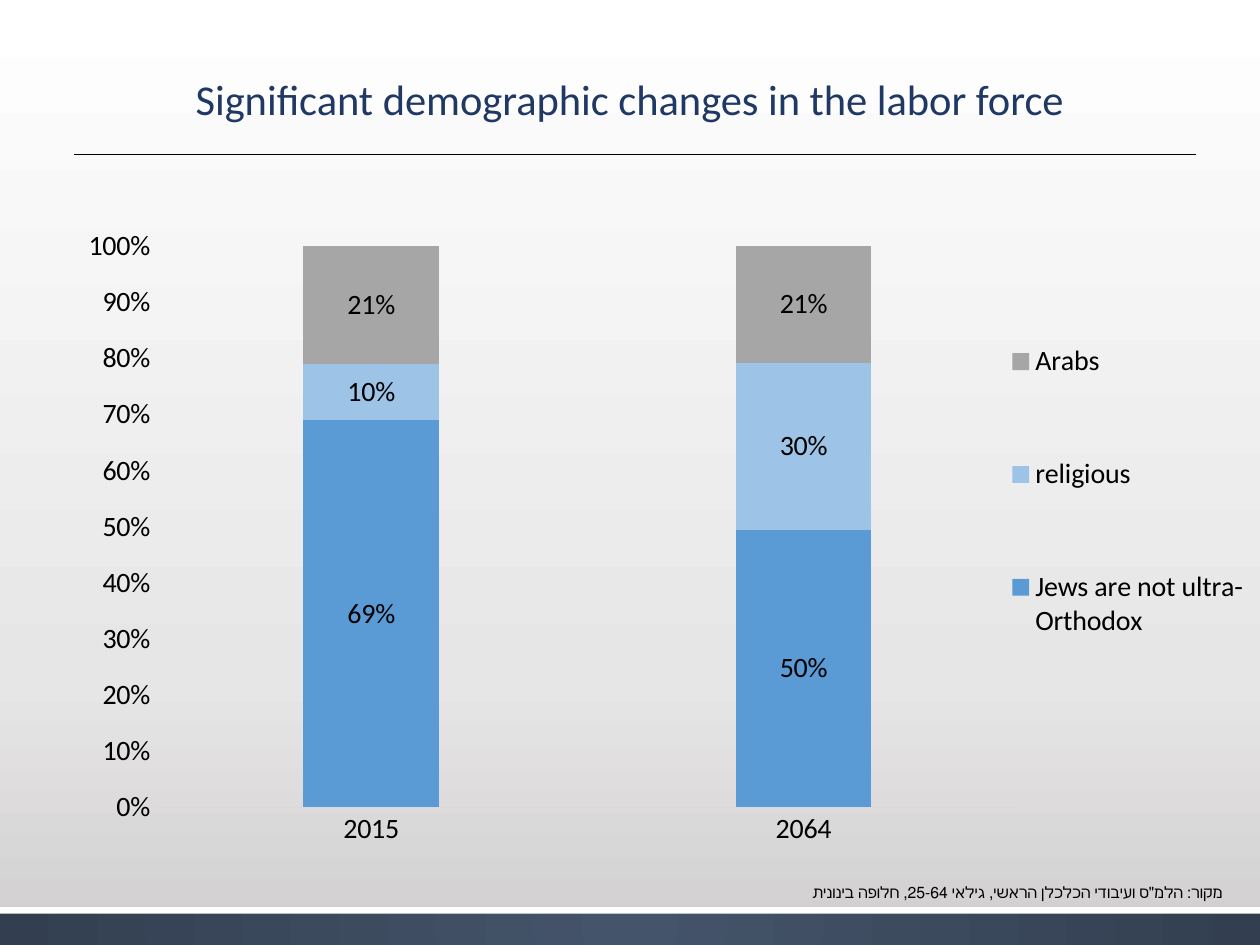
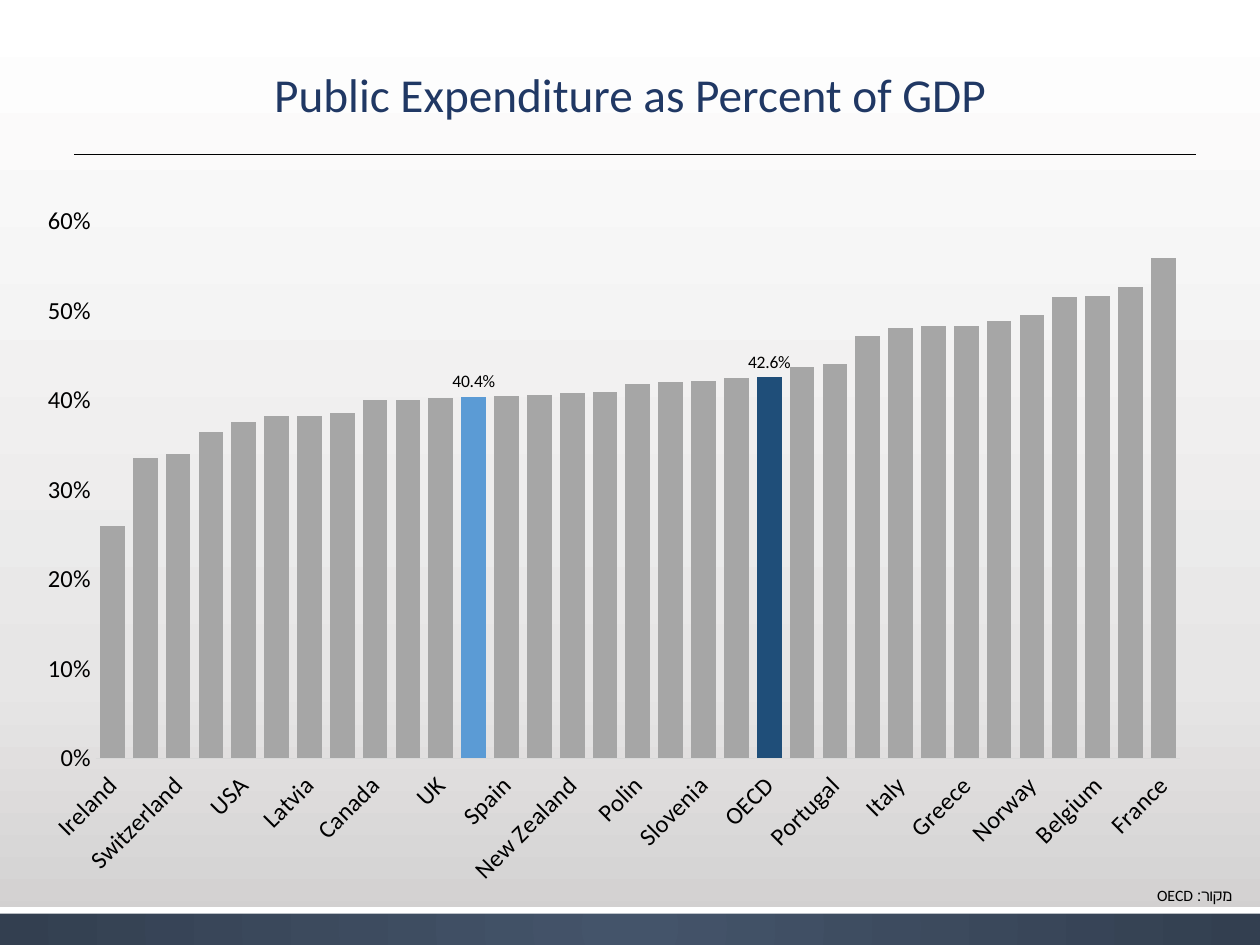
from lxml.etree import SubElement
from pptx import Presentation
from pptx.chart.data import CategoryChartData
from pptx.dml.color import RGBColor
from pptx.enum.chart import XL_CHART_TYPE, XL_LABEL_POSITION, XL_LEGEND_POSITION
from pptx.enum.chart import XL_TICK_LABEL_POSITION, XL_TICK_MARK
from pptx.enum.shapes import MSO_CONNECTOR, MSO_SHAPE
from pptx.enum.text import MSO_ANCHOR, MSO_AUTO_SIZE, PP_ALIGN
from pptx.oxml.ns import qn
from pptx.util import Cm, Pt

COLORS = {
    "white": "FFFFFF", "black": "000000", "title": "203864",
    "mist": "E7E6E6", "fog": "D0CECE", "slate": "44546A", "ink": "333F50",
    "axis": "D9D9D9", "blue": "5B9BD5", "sky": "9DC3E6", "gray": "A6A6A6", "navy": "1F4E79",
}
FONT = "Calibri"
WIDTH, HEIGHT = 25.4, 19.05

LABOR_SHARES = [
    ("Jews are not ultra-Orthodox", (0.69, 0.5), "blue"),
    ("religious", (0.1, 0.3), "sky"),
    ("Arabs", (0.21, 0.21), "gray"),
]
EXPENDITURE = {
    "Ireland": 0.26, "Korea": 0.336, "Switzerland": 0.34, "Australia": 0.365,
    "USA": 0.376, "Japan": 0.382, "Latvia": 0.382, "Czech Republic": 0.386,
    "Canada": 0.4, "Slovakia": 0.4, "UK": 0.402, "Israel": 0.404,
    "Spain": 0.405, "Estonia": 0.406, "New Zealand": 0.408, "Iceland": 0.409,
    "Polin": 0.418, "Netherlands": 0.42, "Slovenia": 0.422, "Luxembourg": 0.425,
    "OECD": 0.426, "Germany": 0.437, "Portugal": 0.441, "Hungary": 0.472,
    "Italy": 0.481, "Austria": 0.483, "Greece": 0.483, "Sweden": 0.488,
    "Norway": 0.495, "Denmark": 0.515, "Belgium": 0.516, "Finland": 0.526,
    "France": 0.559,
}
HIGHLIGHTS = {"Israel": "blue", "OECD": "navy"}


def rgb(color):
    return RGBColor.from_string(COLORS[color])


def set_font(font, size, color="black"):
    font.name = FONT
    font.size = Pt(size)
    font.color.rgb = rgb(color)


def set_gradient(root, stops, angle=None):
    gradient = root.find(".//" + qn("a:gradFill"))
    for child in list(gradient):
        gradient.remove(child)
    stop_list = SubElement(gradient, qn("a:gsLst"))
    for percent, color in stops:
        stop = SubElement(stop_list, qn("a:gs"), pos=str(percent * 1000))
        SubElement(stop, qn("a:srgbClr"), val=COLORS[color])
    if angle is not None:
        SubElement(gradient, qn("a:lin"), ang=str(angle * 60000), scaled="0")
    else:
        circle = SubElement(gradient, qn("a:path"), {"path": "circle"})
        SubElement(circle, qn("a:fillToRect"), dict.fromkeys("ltrb", "50000"))


def set_layout(parent, index, box, inner=False):
    for old in parent.findall(qn("c:layout")):
        parent.remove(old)
    layout = SubElement(parent, qn("c:layout"))
    parent.insert(index, layout)
    manual = SubElement(layout, qn("c:manualLayout"))
    if inner:
        SubElement(manual, qn("c:layoutTarget"), val="inner")
    for mode in ("xMode", "yMode"):
        SubElement(manual, qn("c:" + mode), val="edge")
    for side, value in zip("xywh", box):
        SubElement(manual, qn("c:" + side), val=str(value))


class Deck:
    def __init__(self):
        self.prs = Presentation()
        self.prs.slide_width, self.prs.slide_height = Cm(WIDTH), Cm(HEIGHT)
        self.slide = None

    def new_slide(self):
        self.slide = self.prs.slides.add_slide(self.prs.slide_layouts[5])
        self.slide.background.fill.gradient()
        set_gradient(self.slide.element, [(0, "white"), (72, "mist"), (100, "fog")], 90)
        footer_band = self.band(18.31, 0.74)
        footer_band.fill.gradient()
        set_gradient(footer_band.element, [(0, "slate"), (100, "ink")])
        footer_edge = self.band(18.29, 0.13)
        footer_edge.fill.solid()
        footer_edge.fill.fore_color.rgb = rgb("white")
        self.rule(1.5, 24.1, 3.12)

    def band(self, top, height):
        band = self.slide.shapes.add_shape(
            MSO_SHAPE.RECTANGLE, 0, Cm(top), Cm(WIDTH), Cm(height))
        band.shadow.inherit = False
        band.line.fill.background()
        return band

    def rule(self, left, right, y):
        rule = self.slide.shapes.add_connector(
            MSO_CONNECTOR.STRAIGHT, Cm(left), Cm(y), Cm(right), Cm(y))
        rule.line.color.rgb = rgb("black")
        rule.line.width = Pt(0.5)
        SubElement(rule.element.spPr, qn("a:effectLst"))

    def set_text(self, frame, text, size, color, align):
        frame.word_wrap = True
        frame.text = text
        paragraph = frame.paragraphs[0]
        paragraph.alignment = align
        paragraph._p.get_or_add_pPr().set("rtl", "1")
        set_font(paragraph.runs[0].font, size, color)
        return paragraph

    def title(self, text, size, box):
        title = self.slide.shapes.title
        title.left, title.top, title.width, title.height = map(Cm, box)
        frame = title.text_frame
        frame.vertical_anchor = MSO_ANCHOR.MIDDLE
        frame.auto_size = MSO_AUTO_SIZE.NONE
        self.set_text(frame, text, size, "title", PP_ALIGN.CENTER).line_spacing = 0.9

    def source(self, text, box):
        source = self.slide.shapes.add_textbox(*map(Cm, box))
        self.set_text(source.text_frame, text, 9, "black", PP_ALIGN.RIGHT)

    def column_chart(self, kind, categories, series, box, plot_box,
                     size, top_value, gap, overlap, number_format):
        data = CategoryChartData(number_format=number_format)
        data.categories = categories
        for name, values, _ in series:
            data.add_series(name, values)
        chart = self.slide.shapes.add_chart(kind, *map(Cm, box), data).chart
        chart.has_title = False
        chart.has_legend = False
        set_font(chart.font, size)
        plot = chart.plots[0]
        plot.gap_width, plot.overlap = gap, overlap
        plot.vary_by_categories = False
        for drawn, (_, _, color) in zip(plot.series, series):
            drawn.format.fill.solid()
            drawn.format.fill.fore_color.rgb = rgb(color)
            drawn.invert_if_negative = False
        for axis in (chart.category_axis, chart.value_axis):
            axis.has_major_gridlines = False
            axis.major_tick_mark = axis.minor_tick_mark = XL_TICK_MARK.NONE
            set_font(axis.tick_labels.font, size)
        chart.category_axis.format.line.color.rgb = rgb("axis")
        chart.category_axis.format.line.width = Pt(0.75)
        values = chart.value_axis
        values.format.line.fill.background()
        values.minimum_scale, values.maximum_scale = 0, top_value
        values.major_unit = 0.1
        values.tick_labels.number_format = "0%"
        values.tick_labels.number_format_is_linked = False
        set_layout(chart.element.find(".//" + qn("c:plotArea")), 0, plot_box, inner=True)
        return chart

    def legend(self, chart, size, box):
        chart.has_legend = True
        legend = chart.legend
        legend.position = XL_LEGEND_POSITION.RIGHT
        legend.include_in_layout = False
        set_font(legend.font, size)
        set_layout(chart.element.find(".//" + qn("c:legend")), 1, box)

    def series_labels(self, chart, size):
        for series in chart.plots[0].series:
            labels = series.data_labels
            labels.show_value = True
            labels.number_format = "0%"
            labels.number_format_is_linked = False
            set_font(labels.font, size)

    def highlight(self, chart, index, color):
        series = chart.plots[0].series[0]
        series.data_labels.show_value = False
        point = series.points[index]
        point.format.fill.solid()
        point.format.fill.fore_color.rgb = rgb(color)
        set_font(point.data_label.font, 10)
        point.data_label.position = XL_LABEL_POSITION.OUTSIDE_END


def labor_force(deck):
    deck.new_slide()
    deck.title("Significant demographic changes in the labor force", 24.3,
               (2.79, 0.97, 19.81, 2.18))
    shares = deck.column_chart(
        XL_CHART_TYPE.COLUMN_STACKED_100, ("2015", "2064"), LABOR_SHARES,
        (1.19, 4.32, 24.21, 13), (0.08, 0.05, 0.72, 0.87), 16, 1, 219, 100, "0%")
    deck.series_labels(shares, 16)
    deck.legend(shares, 16, (0.79, 0.08, 0.2, 0.7))
    deck.source("מקור: הלמ\"ס ועיבודי הכלכלן הראשי, גילאי 25-64, חלופה בינונית",
                (13.92, 17.68, 10.97, 0.64))


def public_expenditure(deck):
    deck.new_slide()
    deck.title("Public Expenditure as Percent of GDP", 27, (1.27, 0.36, 22.86, 3.18))
    countries = list(EXPENDITURE)
    expenditure = deck.column_chart(
        XL_CHART_TYPE.COLUMN_CLUSTERED, countries,
        [("Series 1", EXPENDITURE.values(), "gray")],
        (0.51, 3.89, 23.75, 14.25), (0.06, 0.04, 0.92, 0.76), 14, 0.6, 33, -27, "0.0%")
    country_axis = expenditure.category_axis
    country_axis.tick_label_position = XL_TICK_LABEL_POSITION.LOW
    country_axis._element.find(".//" + qn("a:bodyPr")).set("rot", "-2700000")
    for country, color in HIGHLIGHTS.items():
        deck.highlight(expenditure, countries.index(country), color)
    deck.source("מקור: OECD", (19.1, 17.73, 5.99, 0.64))


def main():
    deck = Deck()
    labor_force(deck)
    public_expenditure(deck)
    deck.prs.save("out.pptx")


if __name__ == "__main__":
    main()
